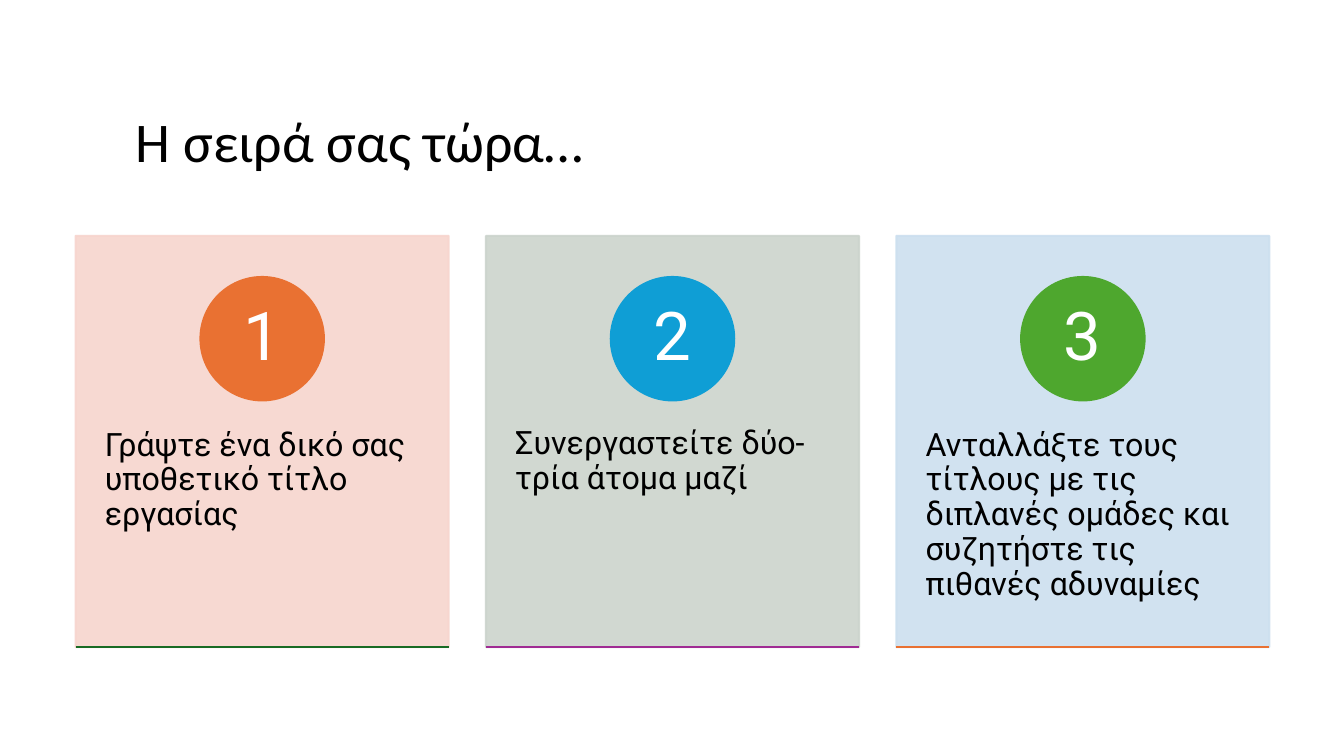
from dataclasses import dataclass

from lxml import etree
from pptx import Presentation
from pptx.dml.color import RGBColor
from pptx.enum.shapes import MSO_CONNECTOR, MSO_SHAPE
from pptx.enum.text import MSO_ANCHOR, PP_ALIGN
from pptx.oxml.ns import qn
from pptx.util import Inches, Pt

RECT = MSO_SHAPE.RECTANGLE
OVAL = MSO_SHAPE.OVAL
LINE = MSO_CONNECTOR.STRAIGHT
TOP = MSO_ANCHOR.TOP
MIDDLE = MSO_ANCHOR.MIDDLE
LEFT = PP_ALIGN.LEFT
CENTER = PP_ALIGN.CENTER

BLACK = RGBColor(0x00, 0x00, 0x00)
WHITE = RGBColor(0xFF, 0xFF, 0xFF)
ROSE = RGBColor(0xF7, 0xD5, 0xCE)
SAGE = RGBColor(0xCC, 0xD4, 0xCD)
SKY = RGBColor(0xCC, 0xDF, 0xEF)
ORANGE = RGBColor(0xE9, 0x71, 0x32)
BLUE = RGBColor(0x0F, 0x9E, 0xD5)
GREEN = RGBColor(0x4E, 0xA7, 0x2E)
FOREST = RGBColor(0x19, 0x6B, 0x24)
PURPLE = RGBColor(0xA0, 0x2B, 0x93)

COL = Inches(0.37)
WIDE = 10 * COL
PITCH = 11 * COL
START = Inches(0.75)
HEAD = Inches(2.34)
HIGH = Inches(4.08)
STROKE = Pt(1.5)


@dataclass
class Step:
    text: str
    tint: RGBColor
    disc: RGBColor
    base: RGBColor


STEPS = [
    Step("Γράψτε ένα δικό σας υποθετικό τίτλο εργασίας", ROSE, ORANGE, FOREST),
    Step("Συνεργαστείτε δύο-τρία άτομα μαζί", SAGE, BLUE, PURPLE),
    Step("Ανταλλάξτε τους τίτλους με τις διπλανές ομάδες και συζητήστε "
         "τις πιθανές αδυναμίες", SKY, GREEN, ORANGE),
]


def write(shape, text: str, font: str, size: int, color: RGBColor,
          pad: tuple[float, float], align=LEFT, anchor=TOP) -> None:
    frame = shape.text_frame
    frame.word_wrap = True
    frame.vertical_anchor = anchor
    frame.margin_left = frame.margin_right = Inches(pad[0])
    frame.margin_top = frame.margin_bottom = Inches(pad[1])
    frame.text = text
    para = frame.paragraphs[0]
    para.alignment = align
    para.line_spacing = 0.9
    face = para.runs[0].font
    face.name = font
    face.size = Pt(size)
    face.color.rgb = color


def paint(slide, kind, box: tuple[int, int, int, int], color: RGBColor):
    shape = slide.shapes.add_shape(kind, *box)
    shape.shadow.inherit = False
    shape.fill.solid()
    shape.fill.fore_color.rgb = color
    shape.line.color.rgb = color
    shape.line.width = STROKE
    return shape


def fade(shape, share: int) -> None:
    for color in shape.element.spPr.iter(qn("a:srgbClr")):
        etree.SubElement(color, qn("a:alpha")).set("val", str(share * 1000))


def rule(slide, left: int, top: int, color: RGBColor) -> None:
    line = slide.shapes.add_connector(LINE, left, top, left + WIDE, top)
    line.line.color.rgb = color
    line.line.width = STROKE
    etree.SubElement(line.element.spPr, qn("a:effectLst"))


def draw(slide, index: int, step: Step) -> None:
    left = START + index * PITCH
    fade(paint(slide, RECT, (left, HEAD, WIDE, HIGH), step.tint), 90)

    label = slide.shapes.add_textbox(left, HEAD + int(0.38 * HIGH),
                                     WIDE, int(0.6 * HIGH))
    write(label, step.text, "Roboto", 23, BLACK, (0.29, 0.36))

    size = int(0.3 * HIGH)
    disc = paint(slide, OVAL, (left + (WIDE - size) // 2,
                               HEAD + int(0.1 * HIGH), size, size), step.disc)
    write(disc, str(index + 1), "Roboto", 48, WHITE, (0.1, 0.01),
          CENTER, MIDDLE)

    rule(slide, left, HEAD + HIGH, step.base)


def main() -> None:
    deck = Presentation()
    deck.slide_width = Inches(13.33)
    deck.slide_height = Inches(7.5)
    slide = deck.slides.add_slide(deck.slide_layouts[6])

    title = slide.shapes.add_textbox(Inches(1.25), Inches(1.08),
                                     Inches(10.83), Inches(0.75))
    write(title, "Η σειρά σας τώρα…", "Calibri", 40, BLACK, (0.1, 0.05))

    for index, step in enumerate(STEPS):
        draw(slide, index, step)
    deck.save("out.pptx")


if __name__ == "__main__":
    main()
